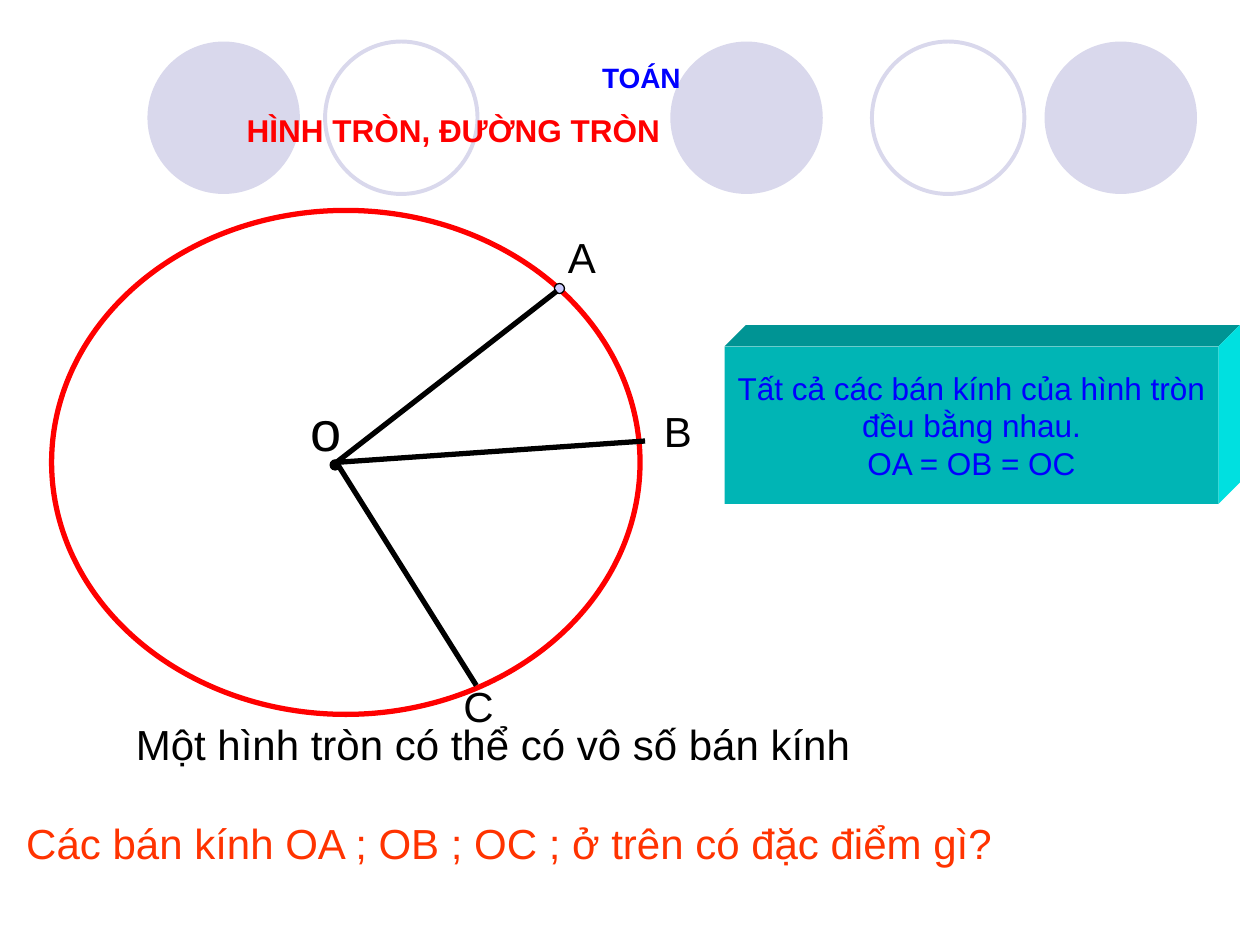
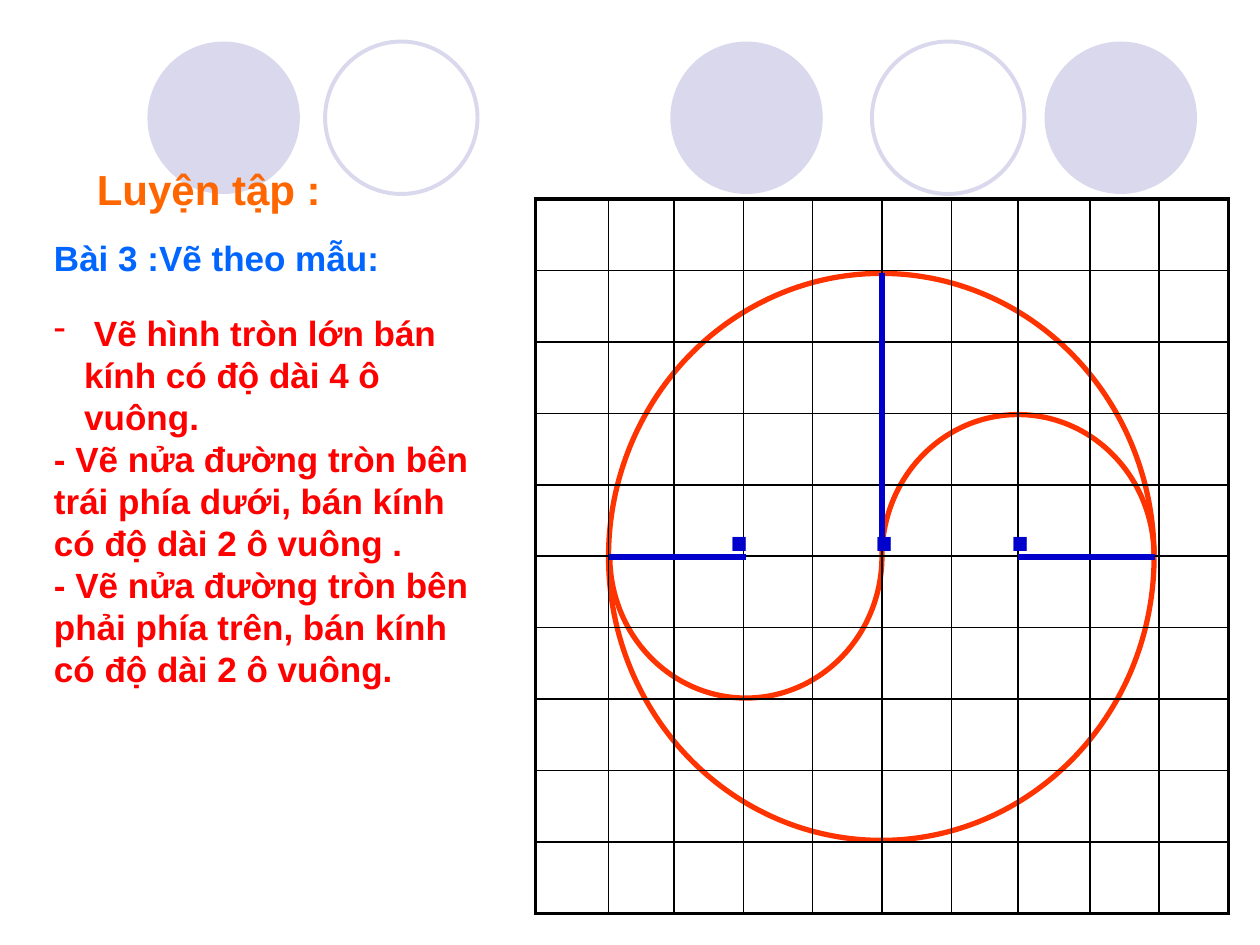
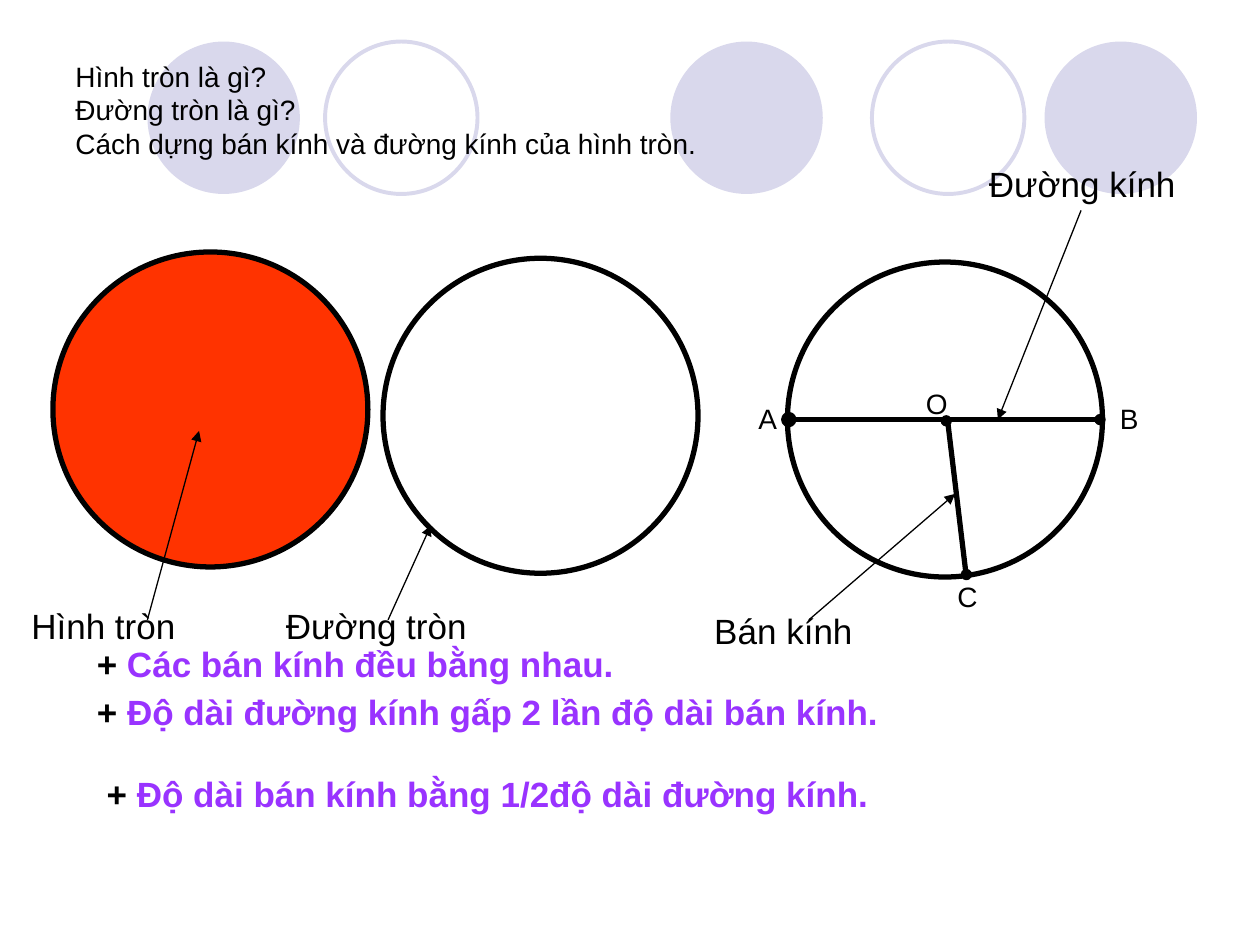
from dataclasses import dataclass
from typing import NamedTuple, Optional

from lxml.etree import SubElement
from pptx import Presentation
from pptx.dml.color import RGBColor
from pptx.enum.shapes import MSO_CONNECTOR, MSO_SHAPE
from pptx.enum.text import MSO_ANCHOR, MSO_AUTO_SIZE, PP_ALIGN
from pptx.oxml.ns import qn
from pptx.util import Inches, Pt


@dataclass(frozen=True)
class Theme:
    font: str = "Arial"
    black: str = "000000"
    white: str = "FFFFFF"
    lavender: str = "D9D8EC"
    point_fill: str = "CCCCFF"
    red: str = "FF0000"
    vermilion: str = "FF3300"
    orange: str = "FF6600"
    blue: str = "0000FF"
    sky: str = "0066FF"
    navy: str = "0000CC"
    violet: str = "9933FF"
    slab_front: str = "00B5B5"
    slab_top: str = "009494"
    slab_side: str = "00E0E0"
    small: int = 16
    medium: int = 18
    body: int = 20
    large: int = 24
    centre: int = 32
    dot: int = 54
    thin: float = 0.75
    grid: float = 1
    frame: float = 2.25
    thick: float = 3


T = Theme()


class Box(NamedTuple):
    x: float
    y: float
    w: float
    h: float

    def emu(self) -> list:
        return [Inches(v) for v in self]


class Segment(NamedTuple):
    start: tuple
    end: tuple


class Label(NamedTuple):
    text: str
    box: Box


class Run(NamedTuple):
    text: str
    color: Optional[str] = None
    size: Optional[int] = None


@dataclass(frozen=True)
class Para:
    runs: tuple
    before: float = 0
    margin: float = 0
    hanging: float = 0
    bullet: str = ""


def rgb(color: str) -> RGBColor:
    return RGBColor.from_string(color)


def paint(shape, fill: Optional[str], line: Optional[str], width: float) -> None:
    shape.shadow.inherit = False
    if fill:
        shape.fill.solid()
        shape.fill.fore_color.rgb = rgb(fill)
    else:
        shape.fill.background()
    if line:
        shape.line.color.rgb = rgb(line)
        shape.line.width = Pt(width)
    else:
        shape.line.fill.background()


def add_shape(s, box: Box, kind=MSO_SHAPE.OVAL, fill: Optional[str] = None,
              line: Optional[str] = None, width: float = T.thick):
    shape = s.shapes.add_shape(kind, *box.emu())
    paint(shape, fill, line, width)
    return shape


def add_polygon(s, points: list, fill: str) -> None:
    corners = [(Inches(x), Inches(y)) for x, y in points]
    builder = s.shapes.build_freeform(*corners[0])
    builder.add_line_segments(corners[1:], close=True)
    paint(builder.convert_to_shape(), fill, None, 0)


def add_line(s, segment: Segment, color: str = T.black, width: float = T.thick,
             arrow: bool = False) -> None:
    ends = [Inches(v) for v in (*segment.start, *segment.end)]
    line = s.shapes.add_connector(MSO_CONNECTOR.STRAIGHT, *ends)
    line.line.color.rgb = rgb(color)
    line.line.width = Pt(width)
    if arrow:
        SubElement(line.line._get_or_add_ln(), qn("a:tailEnd"), type="triangle")
    SubElement(line._element.spPr, qn("a:effectLst"))


def write(tf, paras: list, size: int, color: str, bold: bool = False,
          align=PP_ALIGN.LEFT) -> None:
    """Fill a text frame; an item of paras is a plain string or a Para."""
    for i, item in enumerate(paras):
        para = Para((Run(item),)) if isinstance(item, str) else item
        p = tf.paragraphs[0] if i == 0 else tf.add_paragraph()
        p.alignment = align
        p.space_before = Pt(para.before)
        pPr = p._p.get_or_add_pPr()
        pPr.set("marL", str(Inches(para.margin)))
        pPr.set("indent", str(-Inches(para.hanging)))
        if para.bullet:
            SubElement(pPr, qn("a:buChar"), char=para.bullet)
        for run in para.runs:
            r = p.add_run()
            r.text = run.text
            r.font.name = T.font
            r.font.size = Pt(run.size or size)
            r.font.bold = bold
            r.font.color.rgb = rgb(run.color or color)


def add_text(s, box: Box, *paras, size: int = T.body, color: str = T.black,
             bold: bool = False, wrap: bool = False) -> None:
    tf = s.shapes.add_textbox(*box.emu()).text_frame
    tf.word_wrap = wrap
    tf.auto_size = MSO_AUTO_SIZE.SHAPE_TO_FIT_TEXT
    write(tf, paras, size, color, bold)


def add_labels(s, labels: list, size: int) -> None:
    for label in labels:
        add_text(s, label.box, label.text, size=size)


def new_slide(prs):
    """Add a blank slide with the row of pale circles at the top."""
    s = prs.slides.add_slide(prs.slide_layouts[6])
    for x in (5.32, 8.29, 1.17):
        add_shape(s, Box(x, 0.33, 1.21, 1.21), fill=T.lavender)
    for x in (6.92, 2.58):
        add_shape(s, Box(x, 0.33, 1.21, 1.21), line=T.lavender, width=T.frame)
    return s


def add_slab(s, box: Box, depth: float, lines: list) -> None:
    """Draw a block with a top and a right side, and text on its front."""
    x, y, w, h = box
    right, bottom = x + w, y + h
    add_polygon(s, [(x, y), (x + depth, y - depth),
                    (right + depth, y - depth), (right, y)], T.slab_top)
    add_polygon(s, [(right, y), (right + depth, y - depth),
                    (right + depth, bottom - depth), (right, bottom)], T.slab_side)
    tf = add_shape(s, box, MSO_SHAPE.RECTANGLE, fill=T.slab_front).text_frame
    tf.word_wrap = False
    tf.vertical_anchor = MSO_ANCHOR.MIDDLE
    write(tf, lines, T.medium, T.blue, align=PP_ALIGN.CENTER)


def add_half_circle(s, box: Box, start: float, end: float) -> None:
    arc = add_shape(s, box, MSO_SHAPE.ARC, line=T.vermilion)
    for i, angle in enumerate((start, end)):
        arc.adjustments[i] = angle * 0.6  # 60000 units a degree, scaled by 100000


def add_grid(s, box: Box, widths: list, rows: int) -> None:
    cols = len(widths)
    table = s.shapes.add_table(rows, cols, *box.emu()).table
    table.first_row = table.horz_banding = False
    for col, width in zip(table.columns, widths):
        col.width = Inches(width)
    for r, row in enumerate(table.rows):
        row.height = Inches(box.h) // rows
        for c in range(cols):
            cell = table.cell(r, c)
            tcPr = cell._tc.get_or_add_tcPr()
            outer = {"lnL": c == 0, "lnR": c == cols - 1,
                     "lnT": r == 0, "lnB": r == rows - 1}
            for side, is_frame in outer.items():
                width = Pt(T.frame if is_frame else T.grid)
                ln = SubElement(tcPr, qn(f"a:{side}"), w=str(width))
                fill = SubElement(ln, qn("a:solidFill"))
                SubElement(fill, qn("a:srgbClr"), val=T.black)
            cell.fill.background()


def build_radii(prs) -> None:
    s = new_slide(prs)
    centre = (2.67, 3.67)
    add_shape(s, Box(0.41, 1.67, 4.67, 4), line=T.red)
    add_text(s, Box(2.37, 3.09, 0.6, 0.64), "o", size=T.centre, wrap=True)
    add_shape(s, Box(4.4, 2.25, 0.08, 0.08), fill=T.point_fill, line=T.black,
              width=T.thin)
    for rim in ((4.42, 2.31), (5.12, 3.5), (3.78, 5.44)):
        add_line(s, Segment(rim, centre))
    add_labels(s, [
        Label("A", Box(4.41, 1.79, 0.43, 0.51)),
        Label("B", Box(5.17, 3.17, 0.43, 0.51)),
        Label("C", Box(3.58, 5.35, 0.45, 0.51)),
        Label("Một hình tròn có thể có vô số bán kính", Box(0.98, 5.65, 5.93, 0.51)),
    ], T.large)
    add_text(s, Box(0.11, 6.44, 7.94, 0.51),
             "Các bán kính OA ; OB ; OC ; ở trên có đặc điểm gì?",
             size=T.large, color=T.vermilion)
    add_slab(s, Box(5.75, 2.75, 3.92, 1.25), 0.17, [
        "Tất cả các bán kính của hình tròn", "đều bằng nhau.", "OA = OB = OC"])
    add_shape(s, Box(2.62, 3.65, 0.08, 0.08), MSO_SHAPE.FLOWCHART_CONNECTOR,
              T.black, T.black, T.thin)
    add_text(s, Box(0.58, 0.43, 9.42, 0.78),
             Para((Run("TOÁN", T.blue, T.small),), margin=4.1),
             Para((Run("HÌNH TRÒN, ĐƯỜNG TRÒN"),), before=10, margin=1.28),
             size=T.medium, color=T.red, bold=True, wrap=True)


def build_practice(prs) -> None:
    s = new_slide(prs)
    add_shape(s, Box(4.83, 2.17, 4.33, 4.5), fill=T.white, line=T.vermilion)
    add_half_circle(s, Box(4.84, 3.29, 2.16, 2.25), 0, 180)
    add_half_circle(s, Box(7, 3.29, 2.16, 2.25), 180, 0)
    add_grid(s, Box(4.25, 1.58, 5.5, 5.67),
             [0.58, 0.52, 0.55, 0.55, 0.55, 0.55, 0.53, 0.57, 0.55, 0.55], 10)
    add_text(s, Box(0.67, 1.25, 2.17, 0.48), "Luyện tập :",
             size=T.large, color=T.orange, bold=True, wrap=True)
    add_text(s, Box(0.33, 1.83, 3.25, 0.44), "Bài 3 :Vẽ theo mẫu:",
             color=T.sky, bold=True, wrap=True)
    first_step = Run(" Vẽ hình tròn lớn bán kính có độ dài 4 ô vuông.")
    add_text(s, Box(0.33, 2.42, 3.58, 3.1),
             Para((first_step,), margin=0.24, hanging=0.24, bullet="-"),
             "- Vẽ nửa đường tròn bên trái phía dưới, bán kính có độ dài 2 ô vuông .",
             "- Vẽ nửa đường tròn bên phải phía trên, bán kính có độ dài 2 ô vuông.",
             color=T.red, bold=True, wrap=True)
    for x in (6.82, 7.9, 5.67):
        add_text(s, Box(x, 3.58, 0.52, 1.01), ".", size=T.dot, color=T.navy,
                 bold=True, wrap=True)
    for radius in (Segment((7, 4.33), (7, 2.17)),
                   Segment((8.08, 4.42), (9.17, 4.42)),
                   Segment((5.92, 4.42), (4.83, 4.42))):
        add_line(s, radius, T.navy)


def build_summary(prs) -> None:
    s = new_slide(prs)
    add_text(s, Box(0.5, 0.42, 5.19, 0.91), "Hình tròn là gì?", "Đường tròn là gì?",
             "Cách dựng bán kính và đường kính của hình tròn.", size=T.small)
    for x, y, fill in ((0.42, 2, T.vermilion), (3.04, 2.05, None), (6.25, 2.08, None)):
        add_shape(s, Box(x, y, 2.5, 2.5), fill=fill, line=T.black)

    diameter = Segment((6.23, 3.33), (8.73, 3.33))
    radius = Segment((7.52, 3.33), (7.67, 4.58))
    for line in (diameter, radius):
        add_line(s, line)
    for x, y, width in ((7.47, 3.3, T.thin), (8.69, 3.29, T.thin),
                        (6.22, 3.29, T.thick), (7.63, 4.52, T.thin)):
        add_shape(s, Box(x, y, 0.08, 0.08), MSO_SHAPE.FLOWCHART_CONNECTOR,
                  T.black, T.black, width)
    for pointer in (Segment((1.17, 4.92), (1.58, 3.42)),
                    Segment((3.08, 4.92), (3.42, 4.17)),
                    Segment((8.58, 1.67), (7.92, 3.33)),
                    Segment((6.42, 4.92), (7.58, 3.92))):
        add_line(s, pointer, width=T.thin, arrow=True)

    add_labels(s, [
        Label("Hình tròn", Box(0.15, 4.75, 1.35, 0.44)),
        Label("Đường tròn", Box(2.17, 4.75, 1.65, 0.44)),
        Label("Đường kính", Box(7.75, 1.24, 1.7, 0.44)),
        Label("Bán kính", Box(5.57, 4.79, 1.39, 0.44)),
    ], T.body)
    add_labels(s, [
        Label("O", Box(7.25, 3.02, 0.38, 0.37)),
        Label("A", Box(5.92, 3.14, 0.35, 0.37)),
        Label("B", Box(8.79, 3.14, 0.35, 0.37)),
        Label("C", Box(7.5, 4.55, 0.36, 0.37)),
    ], T.small)

    plus = Run("+ ", T.black)
    add_text(s, Box(0.67, 5.43, 7.25, 1.06),
             Para((plus, Run("Độ dài đường kính gấp 2 lần độ dài bán kính."))),
             Para((Run(" + ", T.black), Run("Độ dài bán kính bằng 1/2độ dài đường kính.")),
                  before=23),
             color=T.violet, bold=True, wrap=True)
    add_text(s, Box(0.67, 5.05, 5, 0.44),
             Para((plus, Run("Các bán kính đều bằng nhau."))),
             color=T.violet, bold=True, wrap=True)


def main() -> None:
    prs = Presentation()
    prs.slide_width, prs.slide_height = Inches(10), Inches(7.5)
    for build in (build_radii, build_practice, build_summary):
        build(prs)
    prs.save("out.pptx")


if __name__ == "__main__":
    main()
